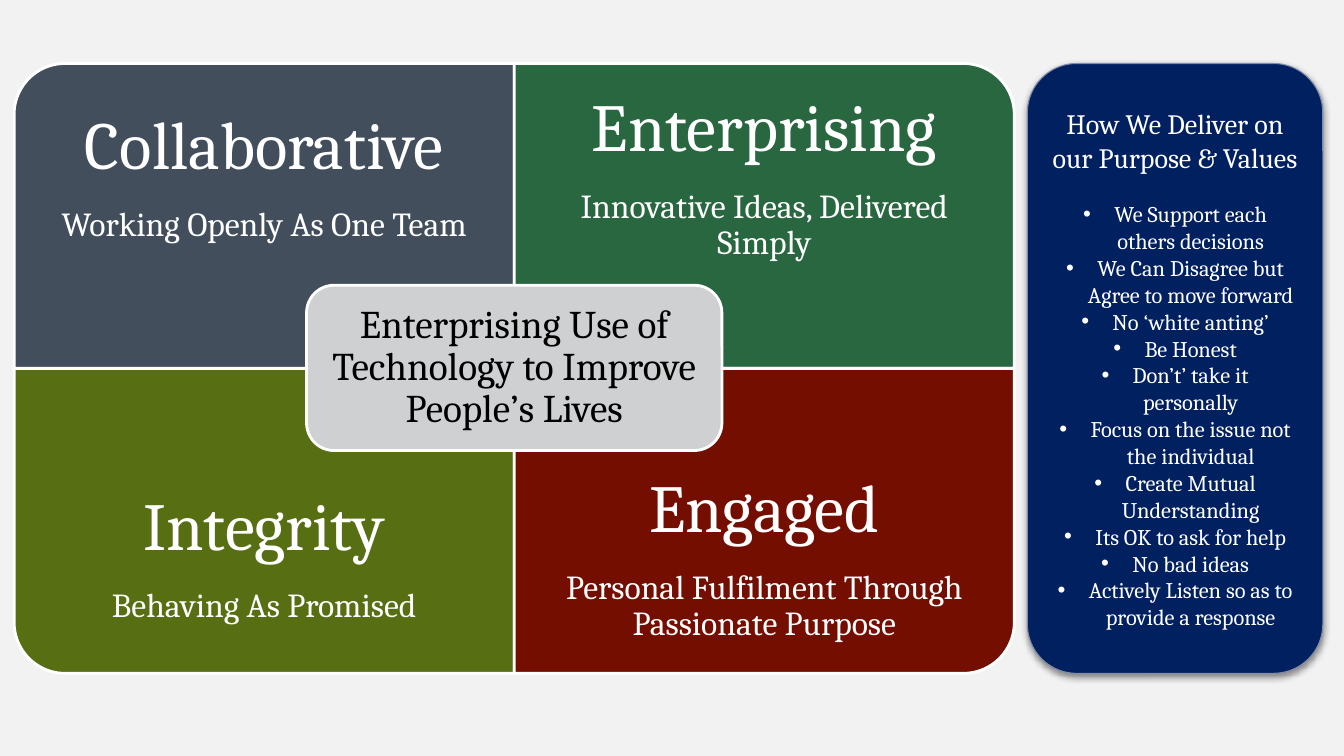
import pptx
import pptx.dml.color
import pptx.enum.shapes
import pptx.enum.text
import pptx.oxml
import pptx.util
from pptx.util import Inches

FONT = "Cambria"
WHITE = "FFFFFF"
NAMESPACE = 'xmlns:a="http://schemas.openxmlformats.org/drawingml/2006/main"'
SHAPES = pptx.enum.shapes.MSO_SHAPE

GRID_LEFT, GRID_TOP = 0.14, 0.63
TILE_WIDTH, TILE_HEIGHT = 4.96, 3.025
TEXT_HEIGHT = 2.27

VALUES = [
    ("Collaborative", "Working Openly As One Team", "424E5B", 270),
    ("Enterprising", "Innovative Ideas, Delivered Simply", "286740", 0),
    ("Integrity", "Behaving As Promised", "576F12", 180),
    ("Engaged", "Personal Fulfilment Through Passionate Purpose", "730E00", 90),
]
PURPOSE = "Enterprising Use of Technology to Improve People’s Lives"
DELIVERY_HEADING = "How We Deliver on our Purpose & Values"
DELIVERY_POINTS = [
    "We Support each others decisions",
    "We Can Disagree but Agree to move forward",
    "No ‘white anting’",
    "Be Honest",
    "Don’t’ take it personally",
    "Focus on the issue not the individual",
    "Create Mutual Understanding",
    "Its OK to ask for help",
    "No bad ideas",
    "Actively Listen so as to provide a response",
]


def color(value):
    return pptx.dml.color.RGBColor.from_string(value)


def add_panel(slide, kind, box, fill, line=WHITE, line_width=2):
    shape = slide.shapes.add_shape(kind, *(Inches(length) for length in box))
    shape.shadow.inherit = False
    shape.fill.solid()
    shape.fill.fore_color.rgb = color(fill)
    shape.line.color.rgb = color(line)
    shape.line.width = pptx.util.Pt(line_width)
    return shape


def prepare_frame(shape, inset_x, inset_y):
    frame = shape.text_frame
    frame.word_wrap = True
    frame.vertical_anchor = pptx.enum.text.MSO_ANCHOR.MIDDLE
    frame.margin_left = frame.margin_right = Inches(inset_x)
    frame.margin_top = frame.margin_bottom = Inches(inset_y)
    return frame


def format_paragraph(paragraph, text, size, text_color=WHITE, space_after=0):
    paragraph.text = text
    paragraph.alignment = pptx.enum.text.PP_ALIGN.CENTER
    paragraph.space_after = pptx.util.Pt(space_after)
    paragraph.font.name = FONT
    paragraph.font.size = pptx.util.Pt(size)
    paragraph.font.color.rgb = color(text_color)


def add_label(slide, box, inset, lines, text_color=WHITE):
    label = slide.shapes.add_textbox(*(Inches(length) for length in box))
    frame = prepare_frame(label, inset, inset)
    for index, (text, size) in enumerate(lines):
        paragraph = frame.add_paragraph() if index else frame.paragraphs[0]
        format_paragraph(paragraph, text, size, text_color, size * 0.35)
        paragraph.line_spacing = 0.9


def add_bullet(paragraph):
    properties = paragraph._p.get_or_add_pPr()
    properties.set("marL", str(Inches(0.31)))
    properties.set("indent", str(-Inches(0.31)))
    for element in ('<a:buFont %s typeface="Arial"/>', '<a:buChar %s char="•"/>'):
        properties.append(pptx.oxml.parse_xml(element % NAMESPACE))


def add_soft_shadow(shape):
    effects = shape._element.spPr.find(pptx.oxml.ns.qn("a:effectLst"))
    effects.append(pptx.oxml.parse_xml(
        f'<a:outerShdw {NAMESPACE} blurRad="{pptx.util.Pt(5)}" '
        f'dist="{pptx.util.Pt(2)}" dir="5400000" algn="t" rotWithShape="0">'
        '<a:srgbClr val="000000"><a:alpha val="43000"/></a:srgbClr></a:outerShdw>'
    ))


def add_value_tile(slide, row, column, name, motto, fill, rotation):
    left = GRID_LEFT + column * TILE_WIDTH
    top = GRID_TOP + row * TILE_HEIGHT
    width, height = TILE_WIDTH, TILE_HEIGHT
    if rotation in (90, 270):
        width, height = height, width
    box = (left + (TILE_WIDTH - width) / 2, top + (TILE_HEIGHT - height) / 2, width, height)
    tile = add_panel(slide, SHAPES.ROUND_1_RECTANGLE, box, fill)
    tile.rotation = rotation
    text_top = top + row * (TILE_HEIGHT - TEXT_HEIGHT)
    add_label(slide, (left, text_top, TILE_WIDTH, TEXT_HEIGHT), 0.37, [(name, 48), (motto, 24)])


def add_delivery_panel(slide):
    box = (10.19, GRID_TOP, 2.93, 2 * TILE_HEIGHT)
    panel = add_panel(slide, SHAPES.ROUNDED_RECTANGLE, box, "002060", "808DA9", 0.75)
    add_soft_shadow(panel)
    frame = prepare_frame(panel, 0.1, 0.05)
    format_paragraph(frame.paragraphs[0], DELIVERY_HEADING, 20, space_after=19)
    for point in DELIVERY_POINTS:
        paragraph = frame.add_paragraph()
        format_paragraph(paragraph, point, 16)
        add_bullet(paragraph)


def main():
    presentation = pptx.Presentation()
    presentation.slide_width = Inches(13.33)
    presentation.slide_height = Inches(7.5)
    slide = presentation.slides.add_slide(presentation.slide_layouts[6])
    slide.background.fill.solid()
    slide.background.fill.fore_color.rgb = color("F2F2F2")

    for index, value in enumerate(VALUES):
        add_value_tile(slide, *divmod(index, 2), *value)
    add_panel(slide, SHAPES.ROUNDED_RECTANGLE, (3.04, 2.83, 4.12, 1.64), "CFD0D2")
    add_label(slide, (3.12, 2.91, 3.96, 1.48), 0.12, [(PURPOSE, 28)], "000000")
    add_delivery_panel(slide)

    presentation.save("out.pptx")


if __name__ == "__main__":
    main()
